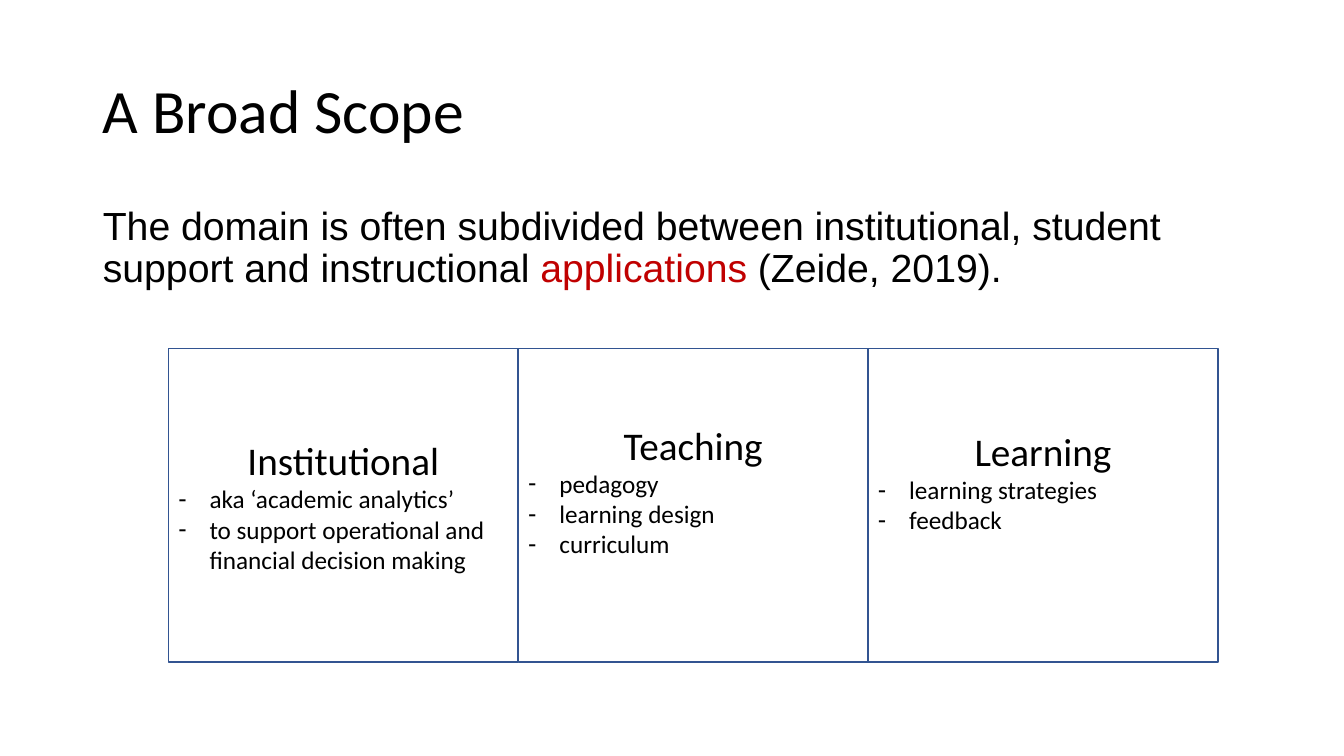
"""Build the slide on the broad scope of the domain."""
from dataclasses import dataclass

from lxml import etree
from pptx import Presentation
from pptx.dml.color import RGBColor
from pptx.enum.shapes import MSO_SHAPE
from pptx.enum.text import MSO_ANCHOR, MSO_AUTO_SIZE, PP_ALIGN
from pptx.oxml.ns import qn
from pptx.util import Inches, Pt

RECTANGLE = MSO_SHAPE.RECTANGLE
TOP, MIDDLE = MSO_ANCHOR.TOP, MSO_ANCHOR.MIDDLE
NO_AUTOFIT = MSO_AUTO_SIZE.NONE
LEFT, CENTER = PP_ALIGN.LEFT, PP_ALIGN.CENTER


@dataclass(frozen=True)
class Theme:
    """Fonts, colours and type sizes of the slide."""

    heading_font: str = "Calibri"
    body_font: str = "Arial"
    text: RGBColor = RGBColor(0x00, 0x00, 0x00)
    accent: RGBColor = RGBColor(0xC0, 0x00, 0x00)
    border: RGBColor = RGBColor(0x32, 0x54, 0x91)
    title_size: int = 44
    lead_size: int = 28
    item_size: int = 18


@dataclass(frozen=True)
class Area:
    """One application area with its dashed list."""

    name: str
    items: tuple[str, ...]
    bottom_margin: float = 0.05


THEME = Theme()
AREAS = (
    Area("Institutional", ("aka ‘academic analytics’",
                           "to support operational and financial decision making")),
    Area("Teaching", ("pedagogy", "learning design", "curriculum"), 0.36),
    Area("Learning", ("learning strategies", "feedback"), 0.53),
)
BOX_LEFT, BOX_TOP, BOX_WIDTH, BOX_HEIGHT = 1.67, 3.46, 3.47, 3.11
DASH_INDENT = 0.31


def set_bullet(paragraph, character: str = "") -> None:
    """Give the paragraph a hanging bullet, or remove its inherited one."""
    properties = paragraph._p.get_or_add_pPr()
    indent = Inches(DASH_INDENT) if character else 0
    properties.set("marL", str(indent))
    properties.set("indent", str(-indent))
    if character:
        etree.SubElement(properties, qn("a:buFont")).set("typeface", THEME.body_font)
        etree.SubElement(properties, qn("a:buChar")).set("char", character)
    else:
        etree.SubElement(properties, qn("a:buNone"))


def add_text(paragraph, text: str, *, size: int, font: str = THEME.heading_font,
             color: RGBColor = THEME.text) -> None:
    """Append a formatted run to the paragraph."""
    run = paragraph.add_run()
    run.text = text
    run.font.size = Pt(size)
    run.font.name = font
    run.font.color.rgb = color


def prepare_placeholder(placeholder, top: float, height: float, anchor: MSO_ANCHOR):
    """Place a template placeholder and return its first paragraph."""
    placeholder.left, placeholder.top = Inches(0.92), Inches(top)
    placeholder.width, placeholder.height = Inches(11.5), Inches(height)
    frame = placeholder.text_frame
    frame.word_wrap = True
    frame.auto_size = NO_AUTOFIT
    frame.vertical_anchor = anchor
    paragraph = frame.paragraphs[0]
    set_bullet(paragraph)
    paragraph.alignment = LEFT
    paragraph.line_spacing = 0.9
    paragraph.space_before = Pt(0)
    return paragraph


def add_area(slide, area: Area, column: int) -> None:
    """Draw one application area in its column."""
    shape = slide.shapes.add_shape(
        RECTANGLE, Inches(BOX_LEFT + column * BOX_WIDTH), Inches(BOX_TOP),
        Inches(BOX_WIDTH), Inches(BOX_HEIGHT))
    shape.shadow.inherit = False
    shape.fill.background()
    shape.line.color.rgb = THEME.border
    shape.line.width = Pt(1)
    frame = shape.text_frame
    frame.word_wrap = True
    frame.vertical_anchor = MIDDLE
    frame.margin_bottom = Inches(area.bottom_margin)
    heading = frame.paragraphs[0]
    heading.alignment = CENTER
    add_text(heading, area.name, size=THEME.lead_size)
    for item in area.items:
        paragraph = frame.add_paragraph()
        paragraph.alignment = LEFT
        set_bullet(paragraph, "-")
        add_text(paragraph, item, size=THEME.item_size)


def main() -> None:
    """Create and save the presentation."""
    presentation = Presentation()
    presentation.slide_width, presentation.slide_height = Inches(13.33), Inches(7.5)
    slide = presentation.slides.add_slide(presentation.slide_layouts[1])
    title = prepare_placeholder(slide.shapes.title, 0.4, 1.45, MIDDLE)
    add_text(title, "A Broad Scope", size=THEME.title_size)
    lead = prepare_placeholder(slide.placeholders[1], 2, 4.76, TOP)
    lead.space_after = Pt(10)
    for text, color in (
        ("The domain is often subdivided between institutional, student support "
         "and instructional ", THEME.text),
        ("applications", THEME.accent),
        (" (Zeide, 2019).", THEME.text),
    ):
        add_text(lead, text, size=THEME.lead_size, font=THEME.body_font, color=color)
    for column, area in enumerate(AREAS):
        add_area(slide, area, column)
    presentation.save("out.pptx")


if __name__ == "__main__":
    main()
